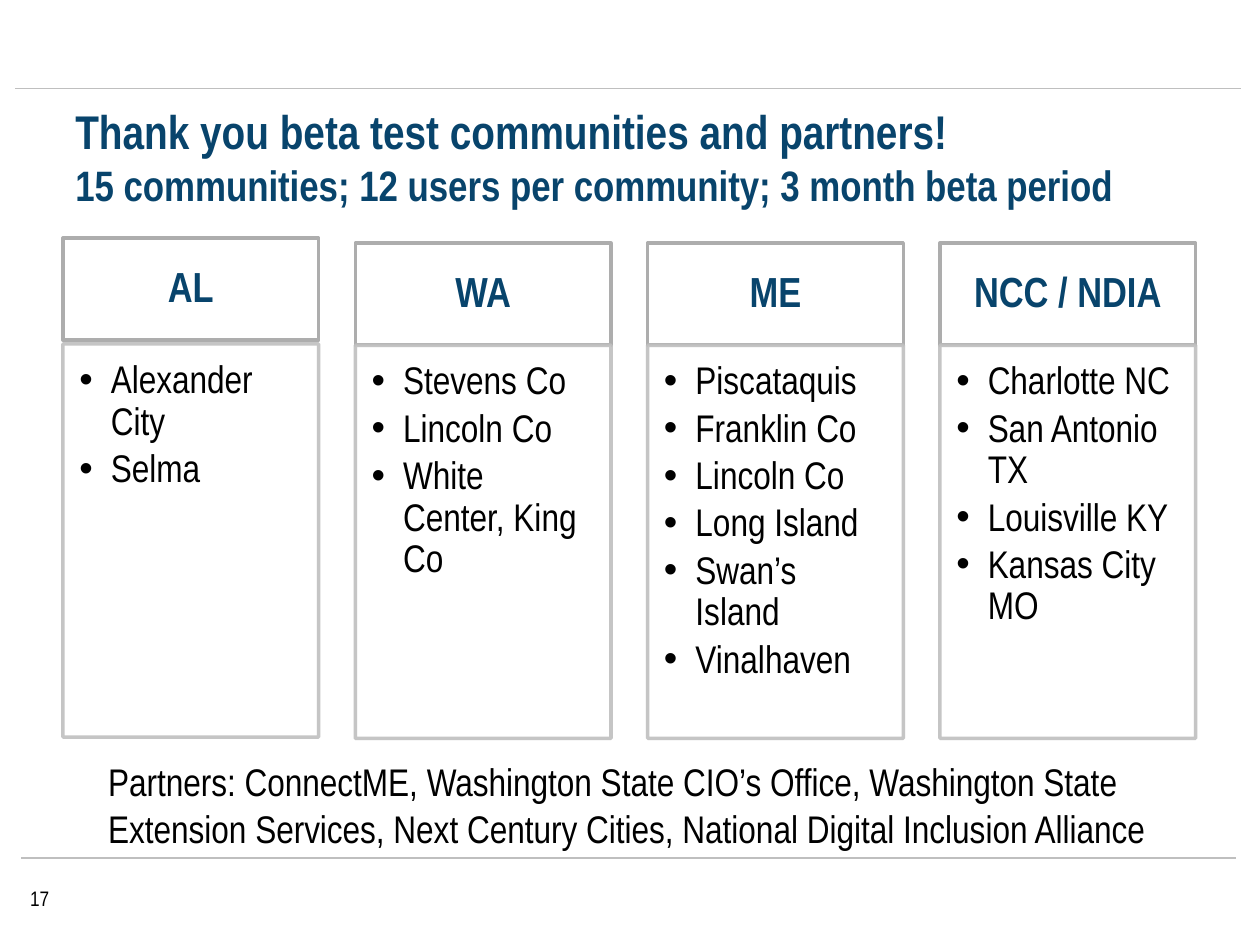
import dataclasses

import lxml.etree
import pptx
import pptx.dml.color
import pptx.enum.shapes
import pptx.enum.text
import pptx.oxml.ns
import pptx.util

EMU_PER_PX = 9144


@dataclasses.dataclass(frozen=True)
class Theme:
    """Colours and type sizes of the slide."""
    font: str = "Arial Narrow"
    navy: str = "08446C"
    ink: str = "000000"
    paper: str = "FFFFFF"
    rule: str = "BFBFBF"
    header_edge: str = "ADADAD"
    title_size: float = 27
    subtitle_size: float = 24.3
    header_size: float = 24
    body_size: float = 22
    number_size: float = 12


THEME = Theme()

COMMUNITIES = [
    ("AL", ["Alexander City", "Selma"]),
    ("WA", ["Stevens Co", "Lincoln Co", "White Center, King Co"]),
    ("ME", ["Piscataquis", "Franklin Co", "Lincoln Co", "Long Island",
            "Swan’s Island", "Vinalhaven"]),
    ("NCC / NDIA", ["Charlotte NC", "San Antonio TX", "Louisville KY",
                    "Kansas City MO"]),
]
PARTNERS = ("Partners: ConnectME, Washington State CIO’s Office, Washington State "
            "Extension Services, Next Century Cities, National Digital Inclusion Alliance")


def px(*lengths):
    """Turn px lengths into EMU."""
    return [pptx.util.Emu(length * EMU_PER_PX) for length in lengths]


def rgb(code):
    """Turn a hex code into a colour."""
    return pptx.dml.color.RGBColor.from_string(code)


def add_element(parent, tag, **attributes):
    """Append a drawing element to a parent."""
    return lxml.etree.SubElement(parent, pptx.oxml.ns.qn(tag), attributes)


def style_run(run, size, color, bold=False):
    """Format one run in the theme font."""
    run.font.name = THEME.font
    run.font.size = pptx.util.Pt(size)
    run.font.bold = bold
    run.font.color.rgb = rgb(color)


def add_text(slide, box, text, sizes, color, bold=False):
    """Add a wrapping text box whose runs take the given sizes."""
    frame = slide.shapes.add_textbox(*px(*box)).text_frame
    frame.word_wrap = True
    frame.paragraphs[0].text = text
    for run, size in zip(frame.paragraphs[0].runs, sizes):
        style_run(run, size, color, bold)
    return frame


def add_rule(slide, left, right, y):
    """Draw a thin horizontal rule."""
    rule = slide.shapes.add_connector(
        pptx.enum.shapes.MSO_CONNECTOR.STRAIGHT, *px(left, y, right, y))
    rule.line.color.rgb = rgb(THEME.rule)
    rule.line.width = pptx.util.Pt(0.75)
    add_element(rule._element.spPr, "a:effectLst")


def add_panel(slide, box, edge, insets):
    """Add a white outlined rectangle ready for text."""
    panel = slide.shapes.add_shape(pptx.enum.shapes.MSO_SHAPE.RECTANGLE, *px(*box))
    panel.shadow.inherit = False
    panel.fill.solid()
    panel.fill.fore_color.rgb = rgb(THEME.paper)
    panel.line.color.rgb = rgb(edge)
    panel.line.width = pptx.util.Pt(2)
    frame = panel.text_frame
    frame.word_wrap = True
    (frame.margin_left, frame.margin_top,
     frame.margin_right, frame.margin_bottom) = px(*insets)
    return panel


def add_header(slide, box, name):
    """Add the heading panel of a community column."""
    frame = add_panel(slide, box, THEME.header_edge, (19, 11, 19, 11)).text_frame
    frame.vertical_anchor = pptx.enum.text.MSO_ANCHOR.MIDDLE
    frame.text = name
    heading = frame.paragraphs[0]
    heading.alignment = pptx.enum.text.PP_ALIGN.CENTER
    heading.line_spacing = 0.9
    style_run(heading.runs[0], THEME.header_size, THEME.navy, True)


def add_places(slide, box, places):
    """Add the panel that lists the places of a community column."""
    panel = add_panel(slide, box, THEME.rule, (13, 13, 17, 19))
    for color in panel._element.spPr.iter(pptx.oxml.ns.qn("a:srgbClr")):
        add_element(color, "a:alpha", val="90000")
    frame = panel.text_frame
    frame.vertical_anchor = pptx.enum.text.MSO_ANCHOR.TOP
    frame.text = "\n".join(places)
    hang = px(25)[0]
    for place in frame.paragraphs:
        place.alignment = pptx.enum.text.PP_ALIGN.LEFT
        place.line_spacing = 0.9
        place.space_after = pptx.util.Pt(3.3)
        properties = place._p.get_or_add_pPr()
        properties.set("marL", str(hang))
        properties.set("indent", str(-hang))
        add_element(properties, "a:buFont", typeface="Arial")
        add_element(properties, "a:buChar", char="•")
        style_run(place.runs[0], THEME.body_size, THEME.ink)


def add_communities(slide, left, top):
    """Add the row of community columns, the first set slightly higher."""
    for index, (name, places) in enumerate(COMMUNITIES):
        x = left + 232 * index
        header_lift, places_lift = (4, 1) if index == 0 else (0, 0)
        add_header(slide, (x, top - header_lift, 203, 81), name)
        add_places(slide, (x, top + 81 - places_lift, 203, 312), places)


def add_title(slide, box):
    """Add the two-line title."""
    frame = add_text(
        slide, box,
        "Thank you beta test communities and partners!\v"
        "15 communities; 12 users per community; 3 month beta period",
        (THEME.title_size, THEME.subtitle_size), THEME.navy, True)
    frame.vertical_anchor = pptx.enum.text.MSO_ANCHOR.MIDDLE


def add_frame(slide):
    """Add the rules and the slide number."""
    add_rule(slide, 12, 985, 70)
    add_rule(slide, 17, 981, 681)
    add_text(slide, (14, 698, 47, 30), "17", (THEME.number_size,), THEME.ink)


def main():
    """Build and save the slide."""
    deck = pptx.Presentation()
    deck.slide_width, deck.slide_height = px(1000, 750)
    slide = deck.slides.add_slide(deck.slide_layouts[6])
    add_frame(slide)
    add_title(slide, (50, 78, 900, 92))
    add_communities(slide, 50, 193)
    add_text(slide, (76, 597, 924, 84), PARTNERS, (THEME.body_size,), THEME.ink)
    deck.save("out.pptx")


if __name__ == "__main__":
    main()
